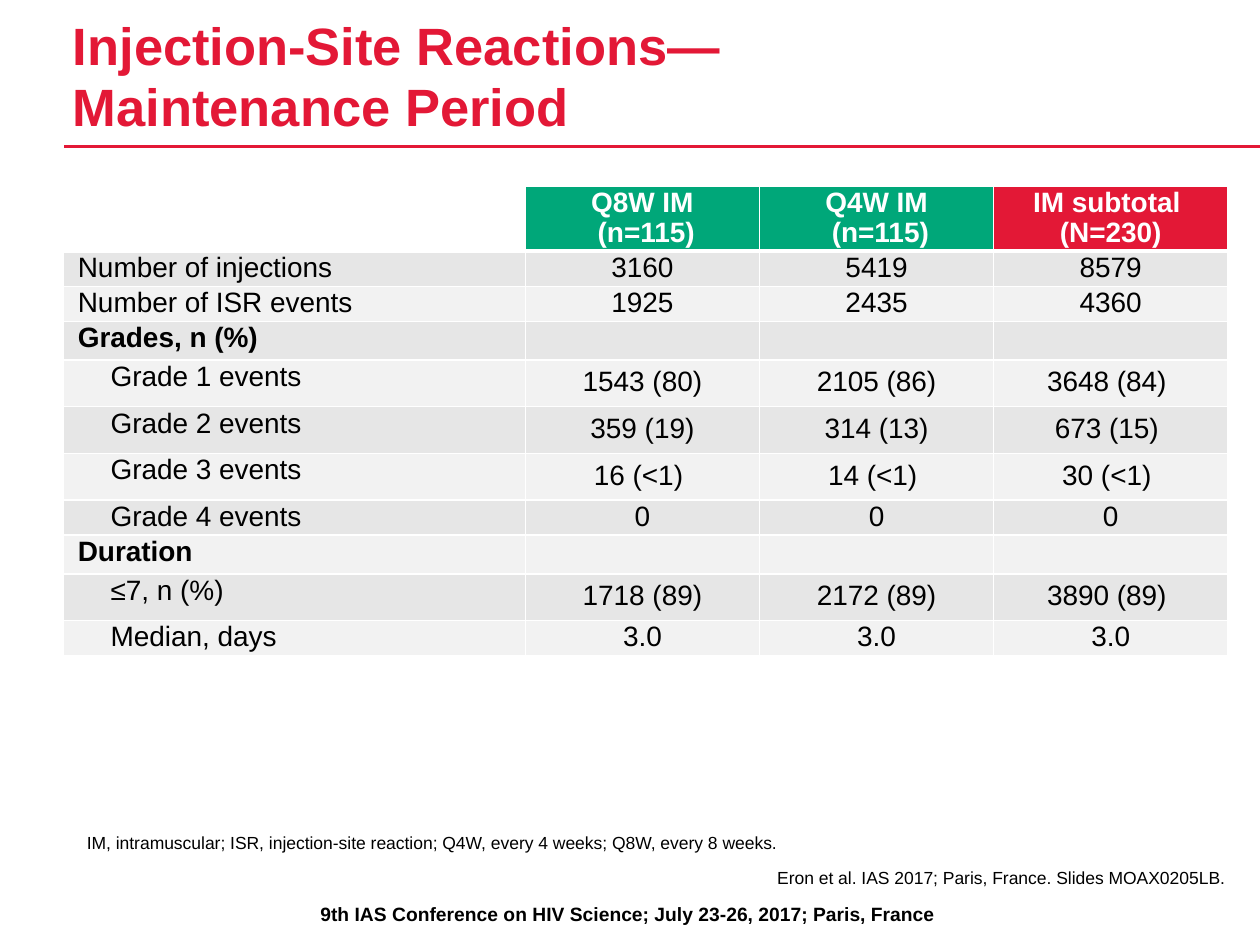
from lxml import etree
from pptx import Presentation
from pptx import util as u
from pptx.dml.color import RGBColor
from pptx.enum import shapes, text
from pptx.oxml import ns

HUES = {
    "red": "E31836", "green": "00A779", "white": "FFFFFF",
    "black": "000000", "dark": "E6E6E6", "light": "F2F2F2",
}
LEFT, MID, RIGHT = text.PP_ALIGN.LEFT, text.PP_ALIGN.CENTER, text.PP_ALIGN.RIGHT
TOP, LOW = text.MSO_ANCHOR.TOP, text.MSO_ANCHOR.BOTTOM
NONE, GROW = text.MSO_AUTO_SIZE.NONE, text.MSO_AUTO_SIZE.SHAPE_TO_FIT_TEXT

HEADS = [
    ("", None),
    ("Q8W IM\n (n=115)", "green"),
    ("Q4W IM\v (n=115)", "green"),
    ("IM subtotal \n(N=230)", "red"),
]
ROWS = [
    ("Number of injections", 0, "3160", "5419", "8579"),
    ("Number of ISR events", 0, "1925", "2435", "4360"),
    ("Grades, n (%)", 0, "", "", ""),
    ("Grade 1 events", 1, "1543 (80)", "2105 (86)", "3648 (84) "),
    ("Grade 2 events", 1, "359 (19)", "314 (13)", "673 (15) "),
    ("Grade 3 events", 1, "16 (<1) ", "14 (<1) ", "30 (<1) "),
    ("Grade 4 events", 1, "0", "0", "0"),
    ("Duration", 0, "", "", ""),
    ("≤7, n (%)", 1, "1718 (89)", "2172 (89)", "3890 (89) "),
    ("Median, days", 1, "3.0", "3.0", "3.0"),
]


class Deck:
    font = "Arial"

    def __init__(self, wide, high):
        self.prs = Presentation()
        self.prs.slide_width, self.prs.slide_height = u.Cm(wide), u.Cm(high)
        self.slide = self.prs.slides.add_slide(self.prs.slide_layouts[1])

    def hue(self, name):
        return RGBColor.from_string(HUES[name])

    def say(self, frame, words, size, hue="black", bold=False, align=LEFT,
            lead=None, after=0, dent=0):
        for i, line in enumerate(words.split("\n")):
            para = frame.add_paragraph() if i else frame.paragraphs[0]
            props = para._p.get_or_add_pPr()
            props.set("marL", str(u.Cm(dent)))
            props.set("indent", "0")
            etree.SubElement(props, ns.qn("a:buNone"))
            para.alignment = align
            para.space_before, para.space_after = u.Pt(0), u.Pt(after)
            if lead:
                para.line_spacing = u.Pt(lead)
            for j, part in enumerate(line.split("\v")):
                if j:
                    para.add_line_break()
                if part:
                    run = para.add_run()
                    run.text = part
                    font = run.font
                    font.name, font.size, font.bold = self.font, u.Pt(size), bold
                    font.color.rgb = self.hue(hue)
            if not line:
                etree.SubElement(para._p, ns.qn("a:endParaRPr"), sz=str(size * 100))

    def fit(self, shape, box, words, size, anchor=TOP, pad=None, auto=NONE, **look):
        shape.left, shape.top, shape.width, shape.height = map(u.Cm, box)
        frame = shape.text_frame
        frame.word_wrap, frame.auto_size = True, auto
        frame.vertical_anchor = anchor
        if pad is not None:
            frame.margin_left = frame.margin_right = u.Cm(pad)
            frame.margin_top = frame.margin_bottom = u.Cm(pad)
        self.say(frame, words, size, **look)

    def title(self, box, words, **look):
        self.fit(self.slide.shapes.title, box, words, 30, pad=0, **look)

    def body(self, box, words, **look):
        self.fit(self.slide.placeholders[1], box, words, 10, pad=0, **look)

    def label(self, box, words, size, **look):
        shape = self.slide.shapes.add_textbox(*map(u.Cm, box))
        self.fit(shape, box, words, size, auto=GROW, **look)

    def rule(self, x, y, end):
        line = self.slide.shapes.add_connector(
            shapes.MSO_CONNECTOR.STRAIGHT, u.Cm(x), u.Cm(y), u.Cm(end), u.Cm(y))
        line.line.color.rgb, line.line.width = self.hue("red"), u.Pt(2)
        etree.SubElement(line._element.spPr, ns.qn("a:effectLst"))

    def edge(self, cell, top, base):
        props = cell._tc.get_or_add_tcPr()
        for side, width in (("L", 1), ("R", 1), ("T", top), ("B", base)):
            line = etree.SubElement(props, ns.qn("a:ln" + side), w=str(u.Pt(width)))
            fill = etree.SubElement(line, ns.qn("a:solidFill"))
            etree.SubElement(fill, ns.qn("a:srgbClr"), val=HUES["white"])

    def cell(self, cell, words, fill, pad, top=1, base=1, anchor=TOP, **look):
        self.edge(cell, top, base)
        if fill:
            cell.fill.solid()
            cell.fill.fore_color.rgb = self.hue(fill)
        else:
            cell.fill.background()
        cell.margin_left = cell.margin_right = u.Cm(pad[0])
        cell.margin_top = cell.margin_bottom = u.Cm(pad[1])
        cell.vertical_anchor = anchor
        self.say(cell.text_frame, words, 16, **look)

    def table(self, x, y, cols, heads, rows):
        highs = [1.3] + [0.94 if "(" in row[2] else 0.71 for row in rows]
        grid = self.slide.shapes.add_table(
            len(highs), len(cols), u.Cm(x), u.Cm(y),
            u.Cm(sum(cols)), u.Cm(sum(highs))).table
        grid.first_row = grid.horz_banding = False
        for col, wide in zip(grid.columns, cols):
            col.width = u.Cm(wide)
        for row, high in zip(grid.rows, highs):
            row.height = u.Cm(high)
        for c, (words, fill) in enumerate(heads):
            self.cell(grid.cell(0, c), words, fill, (0.03, 0.05), base=3,
                      anchor=LOW, hue="white", bold=True, align=MID, lead=17)
        for r, (name, deep, *vals) in enumerate(rows, 1):
            band = "dark" if r % 2 else "light"
            top = 3 if r == 1 else 1
            self.cell(grid.cell(r, 0), name, band, (0.3, 0.05), top,
                      bold=not vals[0], lead=17, dent=0.66 * deep)
            for c, val in enumerate(vals, 1):
                tall = "(" in val
                self.cell(grid.cell(r, c), val, band,
                          (0.25, 0.13) if tall else (0.3, 0.05), top,
                          align=MID, lead=None if tall else 17)


def main():
    deck = Deck(25.4, 19.05)
    deck.label((0.15, 18.06, 25.02, 0.74),
               "9th IAS Conference on HIV Science; July 23-26, 2017; Paris, France",
               11, bold=True, align=MID)
    deck.rule(1.3, 2.95, 25.4)
    deck.title((1.47, 0.43, 20.96, 2.34),
               "Injection-Site Reactions—\vMaintenance Period",
               anchor=LOW, hue="red", bold=True, lead=35)
    deck.table(1.27, 3.76, [9.32] + [4.72] * 3, HEADS, ROWS)
    deck.body((1.47, 17.48, 23.22, 0.51),
              "Eron et al. IAS 2017; Paris, France. Slides MOAX0205LB.",
              align=RIGHT, after=3)
    deck.label((1.5, 16.64, 23.22, 0.69),
               "IM, intramuscular; ISR, injection-site reaction; "
               "Q4W, every 4 weeks; Q8W, every 8 weeks.",
               10, anchor=LOW, after=3)
    deck.prs.save("out.pptx")


if __name__ == "__main__":
    main()
